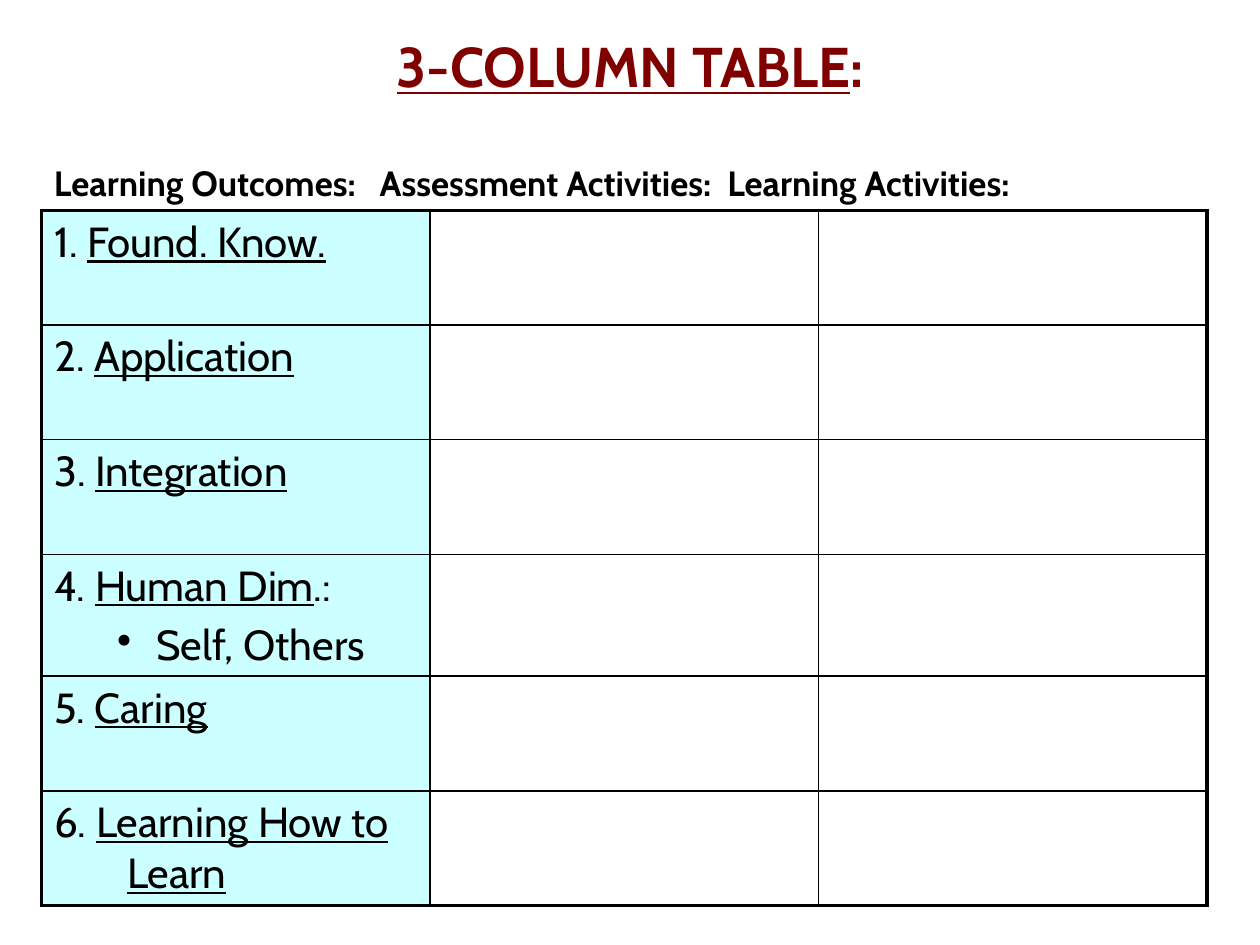
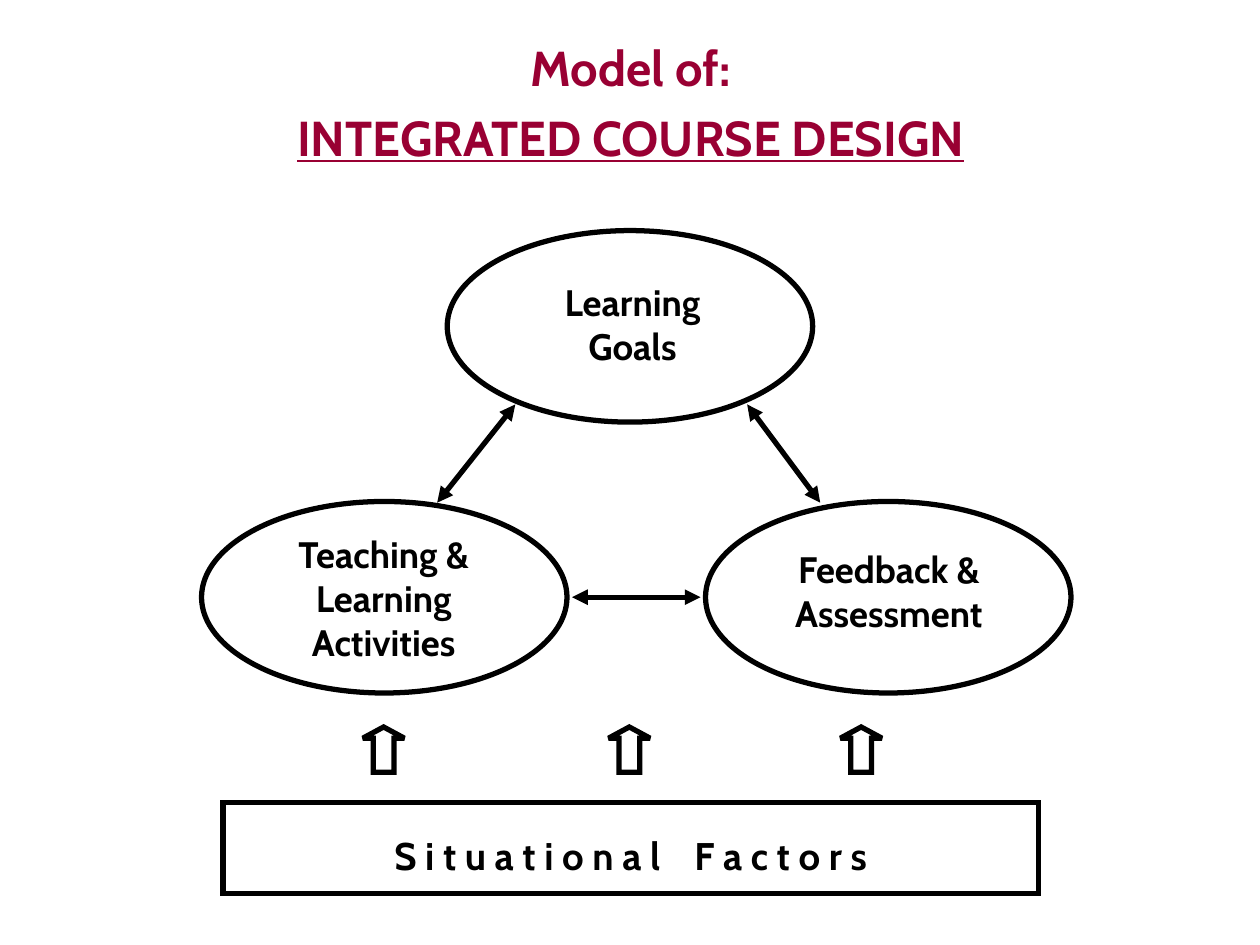
"""Build a three-column planning table and a model of integrated course design."""
from dataclasses import dataclass

from lxml.etree import SubElement
from pptx import Presentation
from pptx.dml.color import RGBColor
from pptx.enum.shapes import MSO_CONNECTOR, MSO_SHAPE
from pptx.enum.text import MSO_ANCHOR, PP_ALIGN
from pptx.oxml.ns import qn
from pptx.util import Inches, Pt


@dataclass(frozen=True)
class Theme:
    font: str = "Cabin"
    ink: str = "000000"
    paper: str = "FFFFFF"
    table_title: str = "800000"
    model_title: str = "990033"
    outcome_fill: str = "CCFFFF"
    size_table_title: int = 32
    size_model_title: int = 28
    size_outcome: int = 24
    size_factor: int = 22
    size_node: int = 21
    size_heading: int = 20
    thin: float = 1
    frame: float = 2.25
    thick: float = 3


THEME = Theme()
UNDERLINE = {"underline": True}


def apply(target, values):
    for name, value in values.items():
        setattr(target, name, value)


def gap(points):
    return " ", {"spacing": points}


def line(*runs, **values):
    return [run if isinstance(run, tuple) else (run, {}) for run in runs], values


class SlideBuilder:
    def __init__(self, presentation, theme):
        self.presentation = presentation
        self.theme = theme
        self.slide = None

    def new_slide(self):
        self.slide = self.presentation.slides.add_slide(self.presentation.slide_layouts[6])
        self.slide.background.fill.solid()
        self.slide.background.fill.fore_color.rgb = RGBColor.from_string(self.theme.paper)

    def fill_text(self, frame, lines, size, color=None, bold=True, alignment=PP_ALIGN.CENTER):
        for index, (runs, values) in enumerate(lines):
            paragraph = frame.add_paragraph() if index else frame.paragraphs[0]
            apply(paragraph, {"alignment": alignment, **values})
            for text, run_format in runs:
                run = paragraph.add_run()
                run.text = text
                values = {"name": self.theme.font, "size": Pt(size), "bold": bold, **run_format}
                spacing = values.pop("spacing", None)
                apply(run.font, values)
                run.font.color.rgb = RGBColor.from_string(color or self.theme.ink)
                if spacing:
                    run.font._element.set("spc", str(round(spacing * 100)))

    def text(self, box, lines, size, **style):
        shape = self.slide.shapes.add_textbox(*map(Inches, box))
        shape.text_frame.word_wrap = True
        self.fill_text(shape.text_frame, lines, size, **style)

    def outline(self, shape, *extras):
        shape.line.color.rgb = RGBColor.from_string(self.theme.ink)
        shape.line.width = Pt(self.theme.thick)
        properties = shape._element.spPr
        for tag, values in (("miter", {"lim": "800000"}), *extras):
            SubElement(properties.find(qn("a:ln")), qn(f"a:{tag}"), values)

    def shape(self, kind, box, adjustments=()):
        shape = self.slide.shapes.add_shape(kind, *map(Inches, box))
        shape.shadow.inherit = False
        shape.fill.solid()
        shape.fill.fore_color.rgb = RGBColor.from_string(self.theme.paper)
        self.outline(shape)
        for index, value in enumerate(adjustments):
            shape.adjustments[index] = value
        return shape

    def double_arrow(self, *ends):
        connector = self.slide.shapes.add_connector(MSO_CONNECTOR.STRAIGHT, *map(Inches, ends))
        triangle = {"type": "triangle"}
        self.outline(connector, ("headEnd", triangle), ("tailEnd", triangle))
        SubElement(connector._element.spPr, qn("a:effectLst"))

    def indent(self, paragraph, left, first, bullet=None):
        properties = paragraph._p.get_or_add_pPr()
        properties.set("marL", str(Inches(left)))
        properties.set("indent", str(Inches(first)))
        if bullet:
            SubElement(properties, qn("a:buChar"), {"char": bullet})

    def borders(self, cell, widths):
        properties = cell._tc.get_or_add_tcPr()
        for index, (side, width) in enumerate(widths.items()):
            border = properties.makeelement(qn(f"a:ln{side}"), {"w": str(Pt(width))})
            fill = SubElement(border, qn("a:solidFill"))
            SubElement(fill, qn("a:srgbClr"), {"val": self.theme.ink})
            properties.insert(index, border)

    def table(self, box, row_height, outcomes, columns=3):
        rows = len(outcomes)
        table = self.slide.shapes.add_table(rows, columns, *map(Inches, box)).table
        apply(table, {"first_row": False, "horz_banding": False})
        for row, lines in zip(table.rows, outcomes):
            row.height = Inches(row_height)
            self.fill_text(row.cells[0].text_frame, lines, self.theme.size_outcome,
                           bold=False, alignment=PP_ALIGN.LEFT)
            for paragraph in row.cells[0].text_frame.paragraphs:
                if paragraph.level:
                    self.indent(paragraph, 0.81, -0.31, "•")
                else:
                    self.indent(paragraph, 0.58, -0.58)
        for index, cell in enumerate(table.iter_cells()):
            row, column = divmod(index, columns)
            if column:
                cell.fill.background()
            else:
                cell.fill.solid()
                cell.fill.fore_color.rgb = RGBColor.from_string(self.theme.outcome_fill)
            edges = {"L": column == 0, "R": column == columns - 1,
                     "T": row == 0, "B": row == rows - 1}
            self.borders(cell, {side: self.theme.frame if outer else self.theme.thin
                                for side, outer in edges.items()})


def add_table_slide(builder):
    theme = builder.theme
    builder.new_slide()
    builder.text((2.73, 0.2, 4.54, 0.63), [line(("3-COLUMN TABLE", UNDERLINE), ":")],
                 theme.size_table_title, color=theme.table_title)
    builder.text((0.33, 1.23, 9.25, 0.44),
                 [line("Learning Outcomes:", gap(9), "Assessment Activities:", gap(4.5),
                       "Learning Activities:")],
                 theme.size_heading, alignment=PP_ALIGN.LEFT)
    names = ["Found. Know.", "Application", "Integration", "Human Dim", "Caring",
             "Learning How to Learn"]
    outcomes = [[line(f"{number}. ", (name, UNDERLINE))]
                for number, name in enumerate(names, 1)]
    human_dimension = outcomes[3]
    human_dimension[0][0].append((".:", {}))
    human_dimension.append(line("Self, Others", level=1, space_before=Pt(4.8)))
    builder.table((0.33, 1.67, 9.25, 5.46), 0.91, outcomes)


def add_model_slide(builder):
    theme = builder.theme
    builder.new_slide()
    factors = builder.shape(MSO_SHAPE.RECTANGLE, (1.77, 6.37, 6.47, 0.72))
    factors.text_frame.vertical_anchor = MSO_ANCHOR.MIDDLE
    builder.fill_text(factors.text_frame,
                      [line("S i t u a t i o n a l", gap(14.5), "F a c t o r s",
                            line_spacing=1.3, space_before=Pt(3))], theme.size_factor)
    for left in (2.88, 4.83, 6.67):
        builder.shape(MSO_SHAPE.UP_ARROW, (left, 5.77, 0.33, 0.36), (0.5, 0.27))
    builder.text((1.42, 0.25, 7.17, 1.13),
                 [line("Model of:"),
                  line(("INTEGRATED COURSE DESIGN", UNDERLINE), space_before=Pt(6))],
                 theme.size_model_title, color=theme.model_title)
    nodes = [
        ((3.55, 1.83), (4.04, 2.17, 1.96, 0.78), [line("Learning Goals")]),
        ((5.6, 3.98), (5.96, 4.29, 2.19, 0.88), [line("Feedback &", gap(28), "Assessment")]),
        ((1.6, 3.98), (1.89, 4.17, 2.31, 1.13),
         [line("Teaching &"), line("Learning"), line("Activities")]),
    ]
    for corner, label_box, lines in nodes:
        builder.shape(MSO_SHAPE.OVAL, (*corner, 2.9, 1.52))
        builder.text(label_box, lines, theme.size_node)
    for ends in ((3.47, 3.99, 4.09, 3.21), (6.51, 3.99, 5.93, 3.21), (4.54, 4.74, 5.56, 4.74)):
        builder.double_arrow(*ends)


def main():
    presentation = Presentation()
    apply(presentation, {"slide_width": Inches(10), "slide_height": Inches(7.5)})
    builder = SlideBuilder(presentation, THEME)
    add_table_slide(builder)
    add_model_slide(builder)
    presentation.save("out.pptx")


if __name__ == "__main__":
    main()
